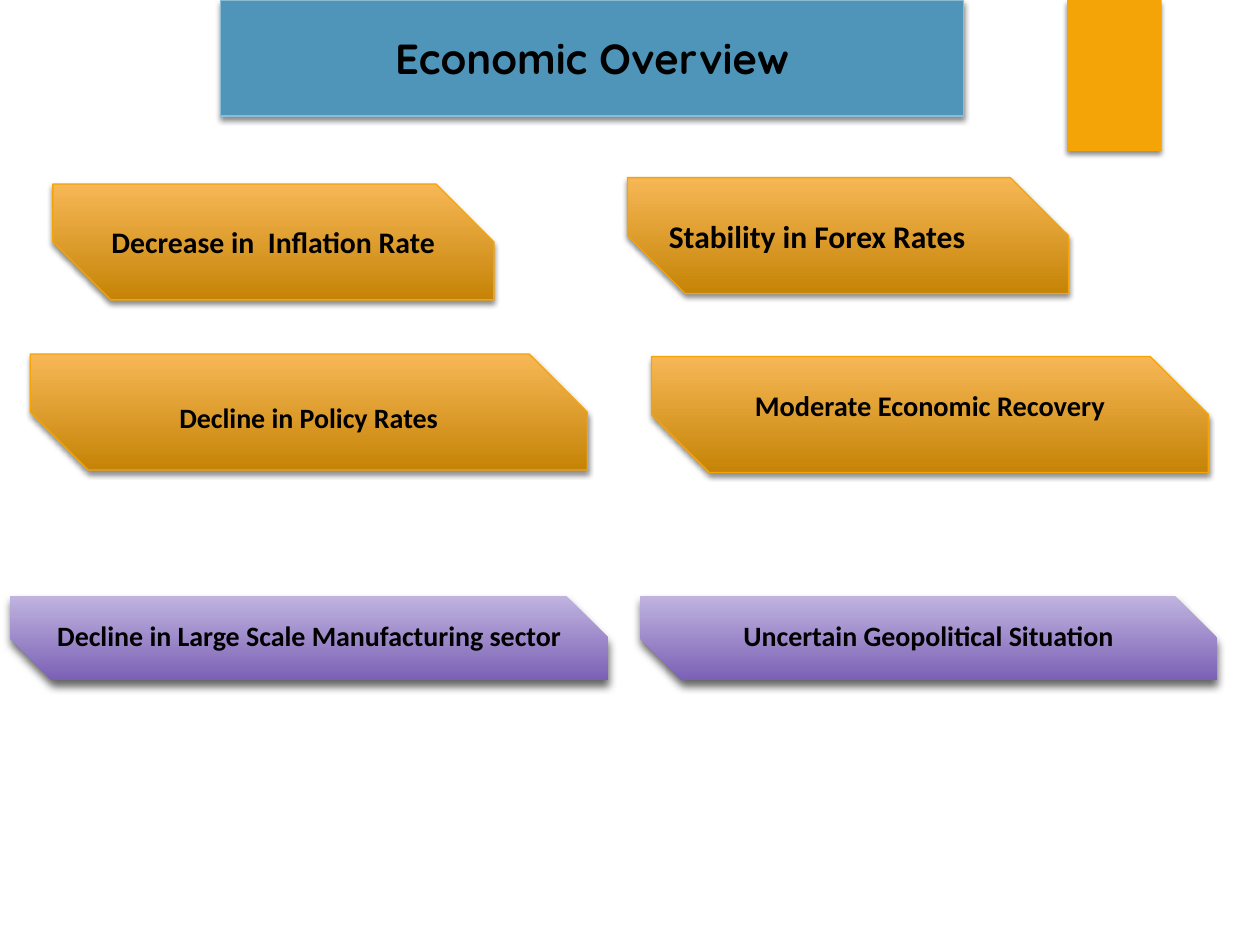
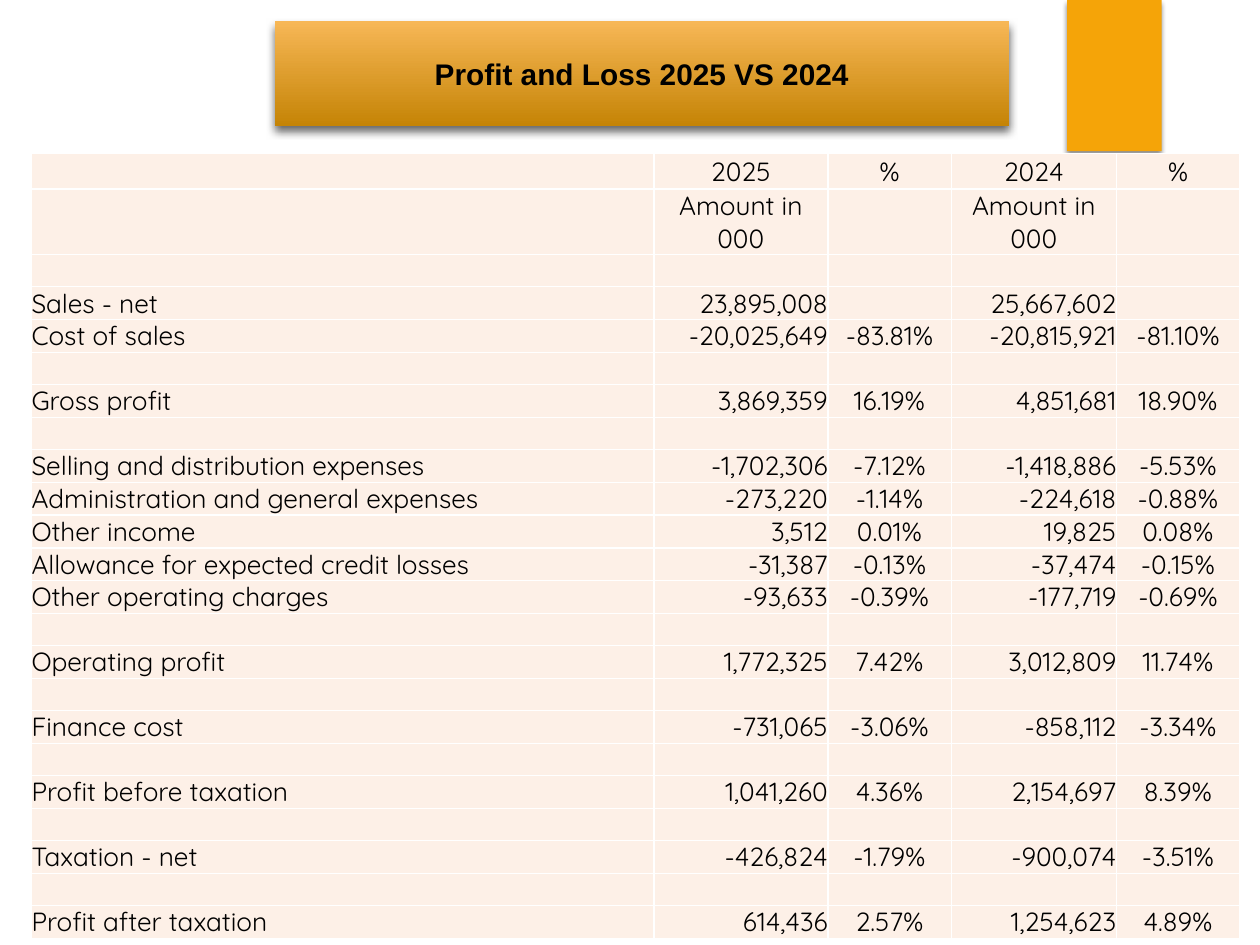
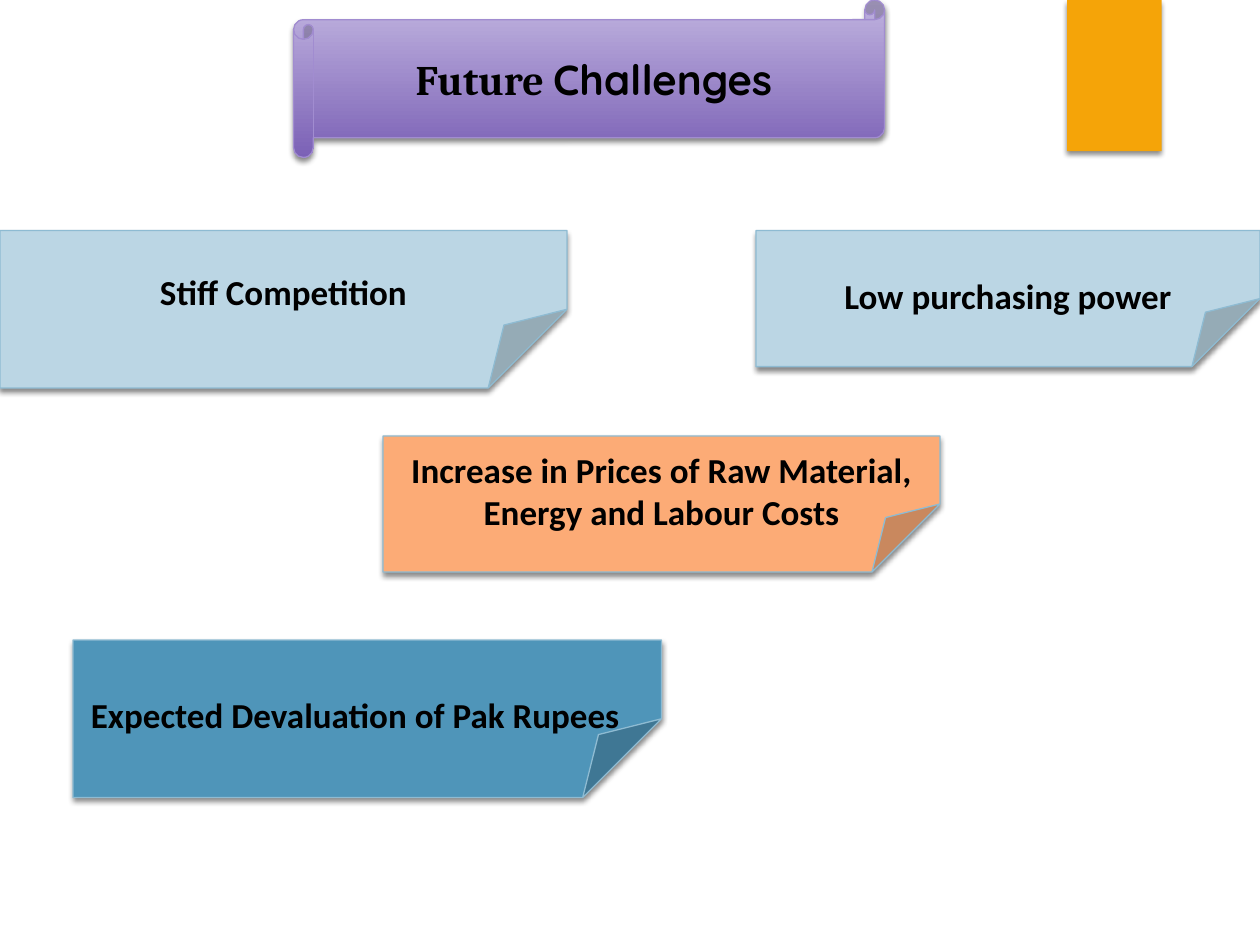
from dataclasses import dataclass

from lxml.etree import SubElement
from pptx import Presentation
from pptx.dml.color import RGBColor
from pptx.enum.shapes import MSO_SHAPE
from pptx.enum.text import MSO_ANCHOR, PP_ALIGN
from pptx.oxml.ns import qn
from pptx.util import Inches, Pt


@dataclass(frozen=True)
class Theme:
    ink: str = "000000"
    amber: str = "F5A408"
    amber_fade: tuple = ("F7B756", "C58406")
    violet: str = "A18CD0"
    violet_fade: tuple = ("C0B3DF", "7B61B6")
    blue: str = "4F95B9"
    sky: str = "8EBBD2"
    pale_blue: str = "BBD6E4"
    peach: str = "FCAB76"
    cell: str = "FDF0E7"
    white: str = "FFFFFF"
    heading: str = "Quicksand"
    serif: str = "Cambria"
    sans: str = "Arial"
    body: str = "Calibri"
    title_size: float = 24
    banner_size: float = 17
    challenge_size: float = 20
    table_size: float = 15
    soft_shadow: tuple = (45, 3, 2)  # opacity, blur, distance
    deep_shadow: tuple = (60, 5, 3)


THEME = Theme()
SLIDE_SIZE = (10, 7.5)
MARKER = (8.47, 0, 0.75, 1.2)

AMBER_CARD = {"fill": THEME.amber_fade, "line": THEME.amber}
VIOLET_CARD = {"fill": THEME.violet_fade, "shadow": THEME.deep_shadow}

# text, place, look, text format
OVERVIEW = [
    ("Decrease in  Inflation Rate", (0.42, 1.46, 3.5, 0.92), AMBER_CARD, {"size": 17}),
    ("Stability in Forex Rates", (4.98, 1.41, 3.5, 0.92), AMBER_CARD,
     {"size": 18, "align": PP_ALIGN.LEFT}),
    ("Decline in Policy Rates", (0.24, 2.81, 4.42, 0.92), AMBER_CARD,
     {"size": 16, "spacing": 0.8, "insets": (0.1, 0.14, 0.1, 0)}),
    ("Moderate Economic Recovery", (5.17, 2.83, 4.42, 0.92), AMBER_CARD,
     {"size": 16.2, "spacing": 0.8, "insets": (0.1, 0, 0.1, 0.1)}),
    ("Decline in Large Scale Manufacturing sector", (0.08, 4.73, 4.75, 0.67),
     VIOLET_CARD, {"size": 16, "spacing": 0.8}),
    ("Uncertain Geopolitical Situation", (5.08, 4.73, 4.58, 0.67),
     VIOLET_CARD, {"size": 16, "spacing": 0.8}),
]

# text, place, fill, insets (left, top, right, bottom)
CHALLENGES = [
    ("Stiff Competition", (0, 1.83, 4.5, 1.25), THEME.pale_blue, (0.1, 0.32, 0.1, 0)),
    ("Low purchasing power", (6, 1.83, 4, 1.08), THEME.pale_blue, (0.1, 0.35, 0.1, 0)),
    ("Increase in Prices of Raw Material, Energy and Labour Costs",
     (3.04, 3.46, 4.42, 1.08), THEME.peach, (0.1, 0.1, 0.1, 0)),
    ("Expected Devaluation of Pak Rupees", (0.58, 5.08, 4.67, 1.25), THEME.blue,
     (0, 0.42, 0.19, 0)),
]

BLANK = ("",) * 5
PROFIT_AND_LOSS = [
    ("", "2025", "%", "2024", "%"),
    ("", "Amount in 000", "", "Amount in 000", ""),
    BLANK,
    ("Sales - net", "23,895,008", "", "25,667,602", ""),
    ("Cost of sales", "-20,025,649", "-83.81%", "-20,815,921", "-81.10%"),
    BLANK,
    ("Gross profit", "3,869,359", "16.19%", "4,851,681", "18.90%"),
    BLANK,
    ("Selling and distribution expenses", "-1,702,306", "-7.12%", "-1,418,886", "-5.53%"),
    ("Administration and general expenses", "-273,220", "-1.14%", "-224,618", "-0.88%"),
    ("Other income", "3,512", "0.01%", "19,825", "0.08%"),
    ("Allowance for expected credit losses", "-31,387", "-0.13%", "-37,474", "-0.15%"),
    ("Other operating charges", "-93,633", "-0.39%", "-177,719", "-0.69%"),
    BLANK,
    ("Operating profit", "1,772,325", "7.42%", "3,012,809", "11.74%"),
    BLANK,
    ("Finance cost", "-731,065", "-3.06%", "-858,112", "-3.34%"),
    BLANK,
    ("Profit before taxation", "1,041,260", "4.36%", "2,154,697", "8.39%"),
    BLANK,
    ("Taxation - net", "-426,824", "-1.79%", "-900,074", "-3.51%"),
    BLANK,
    ("Profit after taxation", "614,436", "2.57%", "1,254,623", "4.89%"),
]
TABLE_PLACE = (0.25, 1.22, 9.58, 6.12)
COLUMN_WIDTHS = (4.94, 1.38, 0.98, 1.31, 0.98)
COLUMN_ALIGNS = (PP_ALIGN.LEFT, PP_ALIGN.RIGHT, PP_ALIGN.CENTER,
                 PP_ALIGN.RIGHT, PP_ALIGN.CENTER)
HEADER_HEIGHTS = [0.28, 0.51]


def set_all(target, values):
    for name, value in values.items():
        setattr(target, name, value)


def rgb(color):
    return RGBColor.from_string(color)


def inches(lengths):
    return [Inches(length) for length in lengths]


def set_insets(target, insets):
    names = ("margin_left", "margin_top", "margin_right", "margin_bottom")
    set_all(target, dict(zip(names, inches(insets))))


def paint(fill, color):
    """Fill with one colour, or fade downwards between a pair of colours."""
    if isinstance(color, str):
        fill.solid()
        fill.fore_color.rgb = rgb(color)
        return
    fill.gradient()
    fill.gradient_angle = 270
    for stop, shade in zip(fill.gradient_stops, color):
        stop.color.rgb = rgb(shade)


def cast_shadow(shape, opacity, blur, distance):
    shape.shadow.inherit = False
    effects = shape._element.spPr.find(qn("a:effectLst"))
    outer = SubElement(effects, qn("a:outerShdw"), blurRad=str(Pt(blur)),
                       dist=str(Pt(distance)), dir="5400000", rotWithShape="0")
    color = SubElement(outer, qn("a:srgbClr"), val=THEME.ink)
    SubElement(color, qn("a:alpha"), val=str(opacity * 1000))


def set_guides(shape, guides):
    """Set the preset's adjustments by guide name, as shares of one."""
    geometry = shape._element.spPr.find(qn("a:prstGeom"))
    for values in geometry.findall(qn("a:avLst")):
        geometry.remove(values)
    values = SubElement(geometry, qn("a:avLst"))
    for name, share in guides.items():
        SubElement(values, qn("a:gd"), name=name, fmla=f"val {round(share * 100000)}")


def add_span(para, text, font, size, bold=True):
    span = para.add_run()
    span.text = text
    set_all(span.font, {"name": font, "size": Pt(size), "bold": bold})
    span.font.color.rgb = rgb(THEME.ink)


def add_box(page, kind, place, fill, line=None, shadow=THEME.soft_shadow, guides=None):
    box = page.shapes.add_shape(kind, *inches(place))
    if guides:
        set_guides(box, guides)
    paint(box.fill, fill)
    if line:
        box.line.color.rgb = rgb(line)
        box.line.width = Pt(0.75)
    else:
        box.line.fill.background()
    cast_shadow(box, *shadow)
    return box


def write(box, spans, size, align=PP_ALIGN.CENTER, spacing=None,
          insets=(0.1, 0.05, 0.1, 0.05), anchor=MSO_ANCHOR.MIDDLE):
    frame = box.text_frame
    set_all(frame, {"word_wrap": True, "vertical_anchor": anchor})
    set_insets(frame, insets)
    para = frame.paragraphs[0]
    set_all(para, {"alignment": align, "line_spacing": spacing})
    for text, font in spans:
        add_span(para, text, font, size)


def add_page(deck):
    page = deck.slides.add_slide(deck.slide_layouts[6])
    add_box(page, MSO_SHAPE.RECTANGLE, MARKER, THEME.amber)
    return page


def style_cell(cell, text, align):
    properties = cell._tc.get_or_add_tcPr()
    for side in ("lnL", "lnR", "lnT", "lnB"):
        border = SubElement(properties, qn(f"a:{side}"), w=str(Pt(1)))
        SubElement(SubElement(border, qn("a:solidFill")), qn("a:srgbClr"), val=THEME.white)
    paint(cell.fill, THEME.cell)
    cell.vertical_anchor = MSO_ANCHOR.MIDDLE
    set_insets(cell, (0, 0, 0, 0))
    para = cell.text_frame.paragraphs[0]
    para.alignment = align
    if text:
        add_span(para, text, THEME.heading, THEME.table_size, bold=False)
    else:
        SubElement(para._p, qn("a:endParaRPr"), sz=str(THEME.table_size * 100))


def add_statement(page):
    count = len(PROFIT_AND_LOSS)
    table = page.shapes.add_table(count, len(COLUMN_WIDTHS), *inches(TABLE_PLACE)).table
    set_all(table, {"first_row": False, "horz_banding": False})
    body_count = count - len(HEADER_HEIGHTS)
    body_height = (TABLE_PLACE[3] - sum(HEADER_HEIGHTS)) / body_count
    for row, height in zip(table.rows, HEADER_HEIGHTS + [body_height] * body_count):
        row.height = Inches(height)
    for column, width in zip(table.columns, COLUMN_WIDTHS):
        column.width = Inches(width)
    for row_index, texts in enumerate(PROFIT_AND_LOSS):
        is_header = row_index < len(HEADER_HEIGHTS)
        for column_index, text in enumerate(texts):
            align = PP_ALIGN.CENTER if is_header else COLUMN_ALIGNS[column_index]
            style_cell(table.cell(row_index, column_index), text, align)


def build_overview(deck):
    page = add_page(deck)
    title = add_box(page, MSO_SHAPE.RECTANGLE, (1.75, 0, 5.9, 0.92), THEME.blue, THEME.sky)
    write(title, [("Economic Overview", THEME.heading)], THEME.title_size)
    for text, place, look, text_format in OVERVIEW:
        card = add_box(page, MSO_SHAPE.SNIP_2_DIAG_RECTANGLE, place,
                       guides={"adj1": 0, "adj2": 0.5}, **look)
        write(card, [(text, THEME.body)], **text_format)


def build_profit_and_loss(deck):
    page = add_page(deck)
    title = add_box(page, MSO_SHAPE.RECTANGLE, (2.18, 0.17, 5.83, 0.83),
                    THEME.amber_fade, shadow=THEME.deep_shadow)
    write(title, [("Profit and Loss 2025 VS 2024", THEME.sans)], THEME.banner_size)
    add_statement(page)


def build_challenges(deck):
    page = add_page(deck)
    title = add_box(page, MSO_SHAPE.HORIZONTAL_SCROLL, (2.33, 0, 4.69, 1.25),
                    THEME.violet_fade, THEME.violet)
    write(title, [("Future ", THEME.serif), ("Challenges", THEME.heading)],
          THEME.title_size)
    for text, place, fill, insets in CHALLENGES:
        note = add_box(page, MSO_SHAPE.FOLDED_CORNER, place, fill, THEME.sky,
                       guides={"adj": 0.5})
        write(note, [(text, THEME.body)], THEME.challenge_size, insets=insets,
              anchor=MSO_ANCHOR.TOP)


def main():
    deck = Presentation()
    deck.slide_width, deck.slide_height = inches(SLIDE_SIZE)
    build_overview(deck)
    build_profit_and_loss(deck)
    build_challenges(deck)
    deck.save("out.pptx")


if __name__ == "__main__":
    main()
